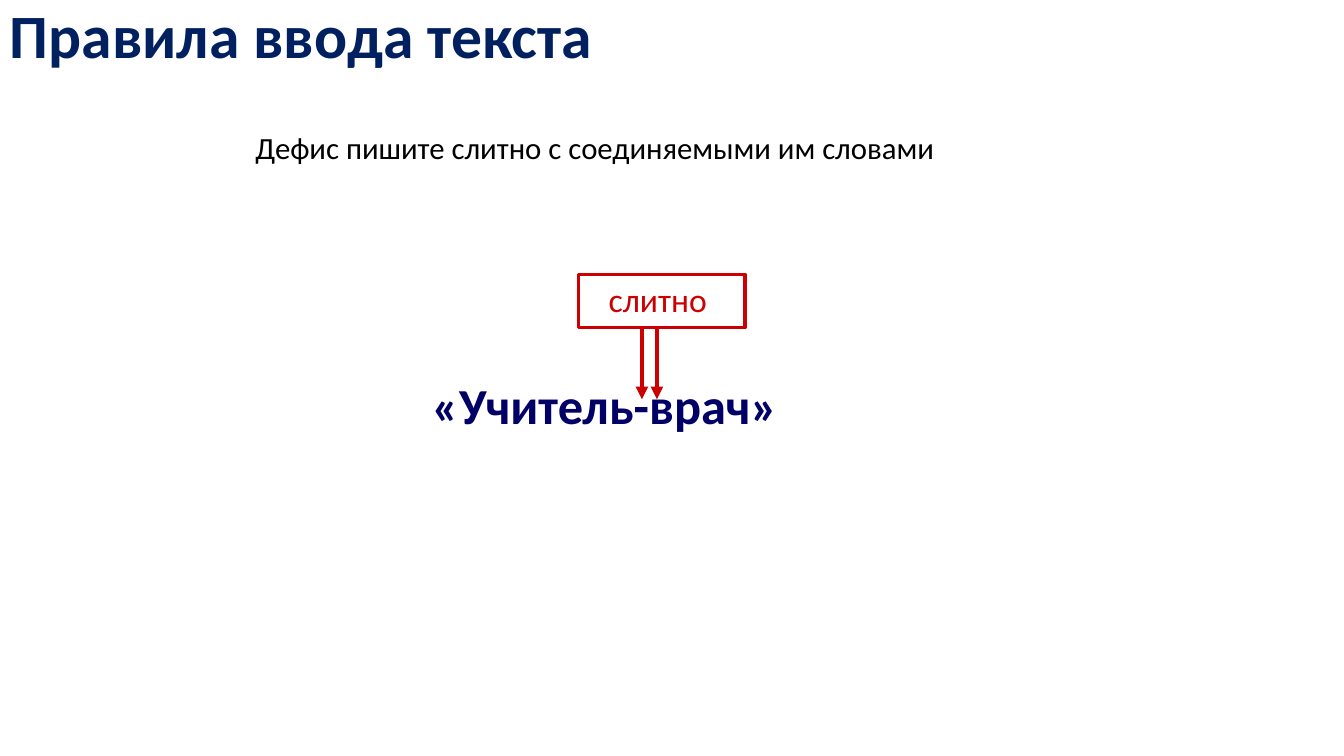
from dataclasses import dataclass

from lxml import etree
from pptx import Presentation
from pptx.dml.color import RGBColor
from pptx.enum.shapes import MSO_CONNECTOR, MSO_SHAPE
from pptx.enum.text import MSO_ANCHOR, PP_ALIGN
from pptx.oxml.ns import qn
from pptx.util import Inches, Pt

LEFT, CENTER = PP_ALIGN.LEFT, PP_ALIGN.CENTER
TOP = MSO_ANCHOR.TOP
RECT = MSO_SHAPE.RECTANGLE
STRAIGHT = MSO_CONNECTOR.STRAIGHT
WIDE, HIGH = Inches(13.33), Inches(7.5)


@dataclass(frozen=True)
class Theme:
    font: str = "Calibri"
    title: str = "002060"
    rule: str = "000000"
    mark: str = "CC0000"
    word: str = "000066"
    title_size: int = 44
    rule_size: int = 22
    mark_size: int = 24
    word_size: int = 36
    frame: float = 2.25
    arrow: float = 3


THEME = Theme()


def grid(left, top, width, height):
    """Turn hundredths of the slide into a box in EMU."""
    return (int(WIDE * left / 100), int(HIGH * top / 100),
            int(WIDE * width / 100), int(HIGH * height / 100))


def write(shape, text, size, color, bold=False, align=CENTER):
    frame = shape.text_frame
    frame.word_wrap = True
    frame.vertical_anchor = TOP
    frame.text = text
    line = frame.paragraphs[0]
    line.alignment = align
    font = line.runs[0].font
    font.name, font.size, font.bold = THEME.font, Pt(size), bold
    font.color.rgb = RGBColor.from_string(color)
    return line


def add_title(slide, box):
    line = write(slide.shapes.add_textbox(*box), "Правила ввода текста",
                 THEME.title_size, THEME.title, True, LEFT)
    line.line_spacing = 0.9


def add_arrow(slide, x, top, end):
    arrow = slide.shapes.add_connector(STRAIGHT, x, top, x, end)
    arrow.line.color.rgb = RGBColor.from_string(THEME.mark)
    arrow.line.width = Pt(THEME.arrow)
    tail = etree.SubElement(arrow.line._get_or_add_ln(), qn("a:tailEnd"))
    tail.set("type", "triangle")
    etree.SubElement(arrow._element.spPr, qn("a:effectLst"))


def add_mark(slide, box):
    """Framed label with two arrows to the sides of the hyphen."""
    left, top, width, height = box
    label = slide.shapes.add_shape(RECT, *box)
    label.shadow.inherit = False
    label.fill.background()
    label.line.color.rgb = RGBColor.from_string(THEME.mark)
    label.line.width = Pt(THEME.frame)
    write(label, "слитно", THEME.mark_size, THEME.mark)
    label.text_frame.margin_right = Inches(0.18)
    base = top + height
    for share in (0.38, 0.47):
        add_arrow(slide, int(left + width * share), base,
                  int(base + height * 1.34))


def add_word(slide, box):
    write(slide.shapes.add_textbox(*box), "«Учитель-врач»",
          THEME.word_size, THEME.word, True)


def add_rule(slide, box):
    write(slide.shapes.add_textbox(*box),
          "Дефис пишите слитно с соединяемыми им словами",
          THEME.rule_size, THEME.rule)


def main():
    deck = Presentation()
    deck.slide_width, deck.slide_height = WIDE, HIGH
    slide = deck.slides.add_slide(deck.slide_layouts[6])
    add_title(slide, grid(0, 0, 86.27, 10.13))
    add_mark(slide, grid(43.06, 36.27, 12.38, 7.07))
    add_word(slide, grid(29.03, 48.8, 31.96, 9.33))
    add_rule(slide, grid(11.78, 16.4, 64.97, 6.27))
    deck.save("out.pptx")


if __name__ == "__main__":
    main()
